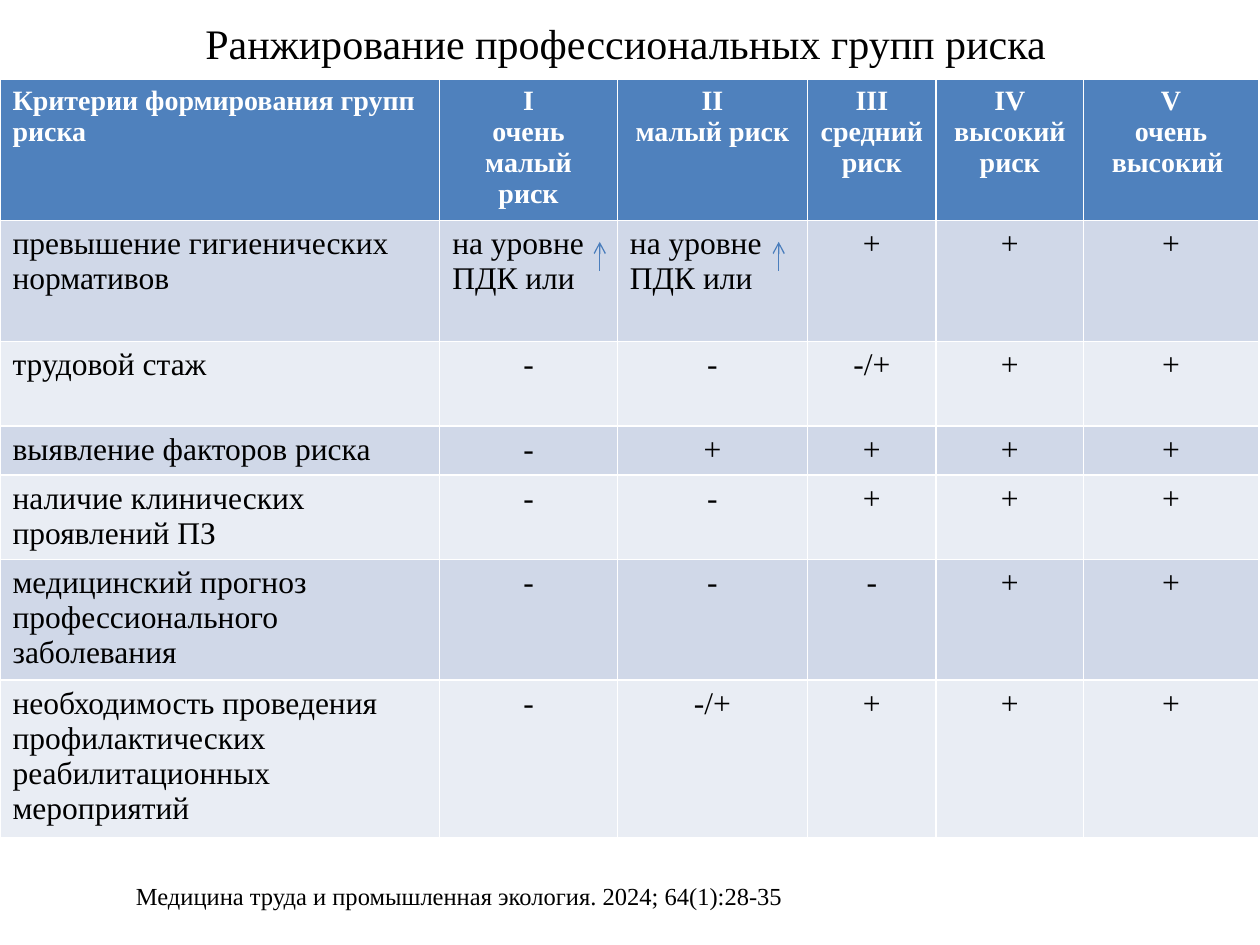
import pptx
import pptx.util
import pptx.dml.color
import pptx.enum.shapes
import pptx.enum.text
import pptx.oxml.ns
from lxml import etree

Inch = pptx.util.Inches
ALIGN = pptx.enum.text.PP_ALIGN
FONT = "Times New Roman"

COLS = [3.49, 1.41, 1.51, 1.02, 1.17, 1.39]
ROWS = [1.12, 0.96, 0.67, 0.39, 0.67, 0.96, 1.25]
HEAD = ["Критерии формирования групп риска", "I\nочень малый риск", "II\nмалый риск",
        "III\nсредний риск", "IV\nвысокий риск", "V\nочень высокий "]
LIMIT = "на уровне ПДК или"
BODY = [
    ["превышение гигиенических нормативов", LIMIT, LIMIT, "+", "+", "+"],
    ["трудовой стаж", "-", "-", "-/+", "+", "+"],
    ["выявление факторов риска", "-", "+", "+", "+", "+"],
    ["наличие клинических проявлений ПЗ", "-", "-", "+", "+", "+"],
    ["медицинский прогноз профессионального заболевания", "-", "-", "-", "+", "+"],
    ["необходимость проведения профилактических реабилитационных мероприятий",
     "-", "-/+", "+", "+", "+"],
]


def color(code):
    return pptx.dml.color.RGBColor.from_string(code)


def write(frame, text, size, tint="000000", bold=False, align=ALIGN.LEFT):
    frame.text = text
    look = {"name": FONT, "size": pptx.util.Pt(size), "bold": bold}
    for para in frame.paragraphs:
        para.alignment = align
        for run in para.runs:
            for key, value in look.items():
                setattr(run.font, key, value)
            run.font.color.rgb = color(tint)


def place(shape, box):
    for key, value in zip(("left", "top", "width", "height"), box):
        setattr(shape, key, Inch(value))


def add_title(slide, box, text):
    title = slide.shapes.title
    place(title, box)
    write(title.text_frame, text, 24)
    title.text_frame.vertical_anchor = pptx.enum.text.MSO_ANCHOR.TOP


def add_source(slide, box, text):
    frame = slide.shapes.add_textbox(*map(Inch, box)).text_frame
    frame.word_wrap = True
    write(frame, text, 14)


def add_grid(slide, left, top):
    """Risk table: header row, then rows in two alternating tints."""
    size = (sum(COLS), sum(ROWS))
    table = slide.shapes.add_table(len(ROWS), len(COLS),
                                   *map(Inch, (left, top, *size))).table
    for col, width in zip(table.columns, COLS):
        col.width = Inch(width)
    for row, height in zip(table.rows, ROWS):
        row.height = Inch(height)
    for i, texts in enumerate([HEAD] + BODY):
        fill = ("E9EDF4", "D0D8E8")[i % 2] if i else "4F81BD"
        look = {"size": 18} if i else {"size": 16, "tint": "FFFFFF", "bold": True}
        for j, text in enumerate(texts):
            cell = table.cell(i, j)
            cell.fill.solid()
            cell.fill.fore_color.rgb = color(fill)
            side = ALIGN.LEFT if j == 0 or text == LIMIT else ALIGN.CENTER
            write(cell.text_frame, text, align=side, **look)


def add_arrow(slide, x, low, high):
    line = slide.shapes.add_connector(pptx.enum.shapes.MSO_CONNECTOR.STRAIGHT,
                                      *map(Inch, (x, low, x, high)))
    line.line.color.rgb = color("4B7EBC")
    line.line.width = pptx.util.Pt(0.75)
    tag = pptx.oxml.ns.qn
    etree.SubElement(line.line._get_or_add_ln(), tag("a:tailEnd"), type="arrow")
    etree.SubElement(line._element.spPr, tag("a:effectLst"))


def main():
    deck = pptx.Presentation()
    deck.slide_width, deck.slide_height = Inch(10), Inch(7.5)
    slide = deck.slides.add_slide(deck.slide_layouts[5])
    add_title(slide, (1.53, 0.09, 7.95, 0.5), "Ранжирование профессиональных групп риска")
    top = 0.63
    add_grid(slide, 0, top)
    mid = top + ROWS[0]
    for n in (2, 3):
        add_arrow(slide, sum(COLS[:n]) - (0.14, 0.23)[n - 2], mid + 0.4, mid + 0.17)
    add_source(slide, (0.98, 6.94, 8.5, 0.58),
               "Медицина труда и промышленная экология. 2024; 64(1):28-35")
    deck.save("out.pptx")


if __name__ == "__main__":
    main()
